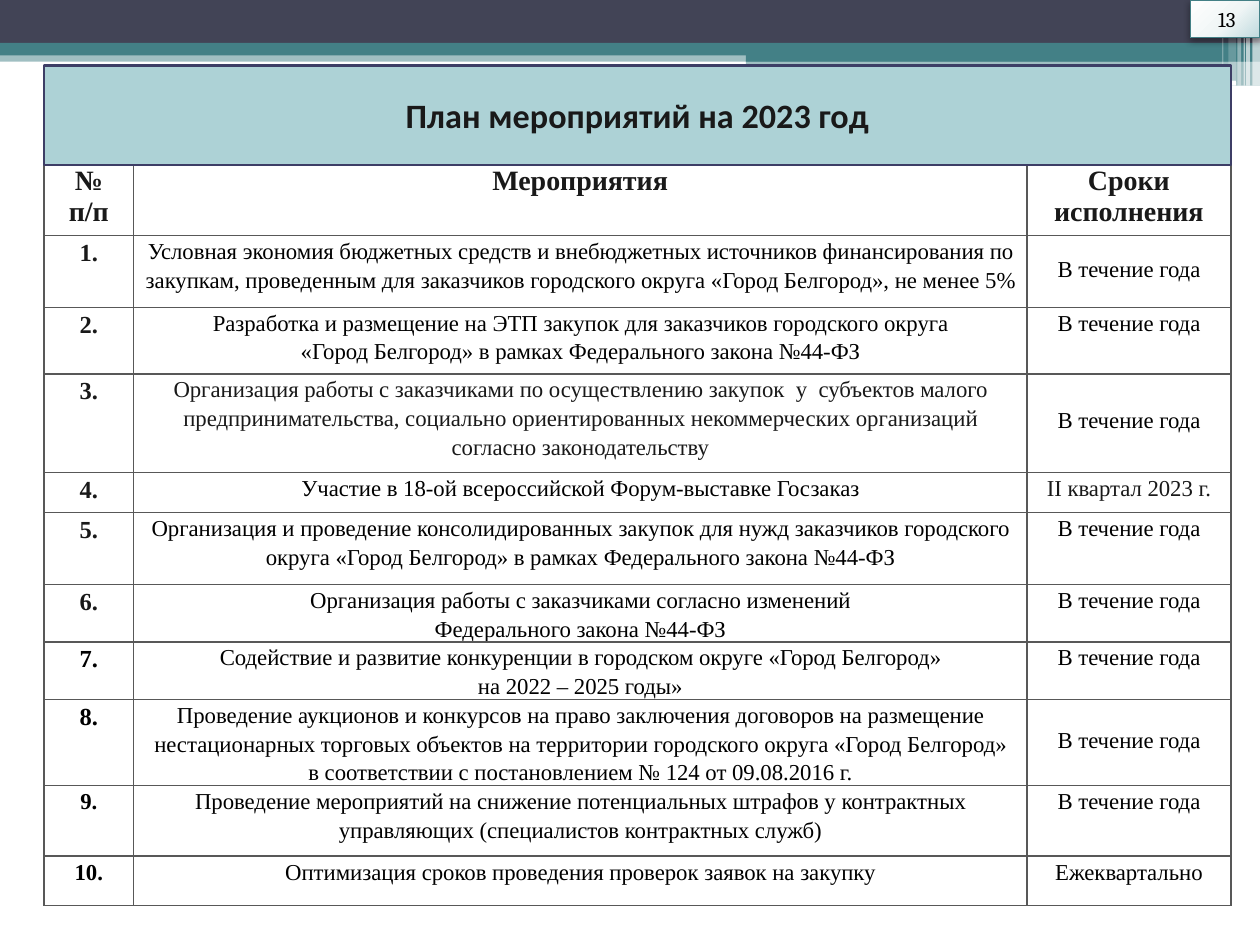
from lxml import etree
from pptx import Presentation
from pptx import oxml
from pptx.dml.color import RGBColor
from pptx.enum import shapes, text
from pptx.oxml import ns
from pptx.util import Inches, Pt

DARK = RGBColor(0x42, 0x44, 0x56)
TEAL = RGBColor(0x43, 0x80, 0x86)
PALE = RGBColor(0xAD, 0xD2, 0xD6)
NAVY = RGBColor(0x3D, 0x3E, 0x66)
GREY = RGBColor(0x58, 0x58, 0x58)
INK = RGBColor(0x19, 0x19, 0x19)
BLACK = RGBColor(0, 0, 0)
WHITE = RGBColor(0xFF, 0xFF, 0xFF)

BANDS = [
    (0, 0.4, 10, 0.09, TEAL, 50),
    (0, 0, 10, 0.34, DARK, 100),
    (0, 0.34, 10, 0.1, TEAL, 100),
    (5.92, 0.39, 4.08, 0.1, TEAL, 100),
    (5.92, 0.48, 4.08, 0.2, TEAL, 50),
]
STRIPES = [
    (9.94, 0.06, 0.68, 65),
    (9.89, 0.03, 0.68, 65),
    (9.87, 0.01, 0.68, 60),
    (9.82, 0.03, 0.68, 40),
    (9.75, 0.06, 0.64, 20),
    (9.7, 0.01, 0.64, 30),
]
COLS = [0.71, 7.09, 1.62]
ROWS = [0.56, 0.57, 0.53, 0.78, 0.32, 0.57, 0.45, 0.45, 0.67, 0.56, 0.39]
HEADS = [["№", "п/п"], ["Мероприятия"], ["Сроки исполнения"]]
YEAR = "В течение года"
PLAN = [
    (["Условная экономия бюджетных средств и внебюджетных источников финансирования по "
      "закупкам, проведенным для заказчиков городского округа «Город Белгород», не менее 5%"], YEAR),
    (["Разработка и размещение на ЭТП закупок для заказчиков городского округа",
      "«Город Белгород» в рамках Федерального закона №44-ФЗ"], YEAR),
    (["Организация работы с заказчиками по осуществлению закупок  у  субъектов малого "
      "предпринимательства, социально ориентированных некоммерческих организаций "
      "согласно законодательству"], YEAR),
    (["Участие в 18-ой всероссийской Форум-выставке Госзаказ"], "II квартал 2023 г."),
    (["Организация и проведение консолидированных закупок для нужд заказчиков городского "
      "округа «Город Белгород» в рамках Федерального закона №44-ФЗ"], YEAR),
    (["Организация работы с заказчиками согласно изменений",
      "Федерального закона №44-ФЗ"], YEAR),
    (["Содействие и развитие конкуренции в городском округе «Город Белгород»",
      "на 2022 – 2025 годы»"], YEAR),
    (["Проведение аукционов и конкурсов на право заключения договоров на размещение "
      "нестационарных торговых объектов на территории городского округа «Город Белгород»",
      "в соответствии с постановлением № 124 от 09.08.2016 г."], YEAR),
    (["Проведение мероприятий на снижение потенциальных штрафов у контрактных "
      "управляющих (специалистов контрактных служб)"], YEAR),
    (["Оптимизация сроков проведения проверок заявок на закупку"], "Ежеквартально"),
]
CENTRED = {1, 3, 8}

BADGE_FILL = f"""<a:gradFill {ns.nsdecls('a')} rotWithShape="1"><a:gsLst>
<a:gs pos="0"><a:srgbClr val="FEFEFE"/></a:gs>
<a:gs pos="55000"><a:srgbClr val="F0F6F6"/></a:gs>
<a:gs pos="100000"><a:srgbClr val="BFD9DD"/></a:gs></a:gsLst>
<a:path path="circle"><a:fillToRect l="-40000" t="-90000" r="140000" b="190000"/></a:path>
</a:gradFill>"""
BADGE_SHADE = f"""<a:effectLst {ns.nsdecls('a')}>
<a:outerShdw blurRad="52000" dist="25400" dir="5400000" rotWithShape="0">
<a:srgbClr val="000000"><a:alpha val="40000"/></a:srgbClr></a:outerShdw></a:effectLst>"""


class Deck:
    serif = "Times New Roman"

    def __init__(self):
        self.prs = Presentation()
        self.prs.slide_width, self.prs.slide_height = Inches(10), Inches(7.5)
        self.slide = self.prs.slides.add_slide(self.prs.slide_layouts[5])

    def box(self, x, y, w, h, color, alpha=100, kind=shapes.MSO_SHAPE.RECTANGLE):
        shape = self.slide.shapes.add_shape(kind, Inches(x), Inches(y), Inches(w), Inches(h))
        shape.shadow.inherit = False
        shape.fill.solid()
        shape.fill.fore_color.rgb = color
        shape.line.fill.background()
        if alpha < 100:
            tone = shape._element.spPr.find(".//" + ns.qn("a:srgbClr"))
            etree.SubElement(tone, ns.qn("a:alpha")).set("val", str(alpha * 1000))
        return shape

    def label(self, para, words, size, font, color=INK, bold=False, align=text.PP_ALIGN.CENTER):
        para.alignment = align
        run = para.add_run()
        run.text = words
        run.font.size, run.font.name, run.font.bold = Pt(size), font, bold
        run.font.color.rgb = color

    def title(self, words, x, y, w, h):
        shape = self.slide.shapes.title
        shape.left, shape.top, shape.width, shape.height = map(Inches, (x, y, w, h))
        shape._element.spPr.append(oxml.parse_xml(
            f'<a:prstGeom {ns.nsdecls("a")} prst="roundRect"><a:avLst/></a:prstGeom>'))
        shape.fill.solid()
        shape.fill.fore_color.rgb = PALE
        shape.line.color.rgb, shape.line.width = NAVY, Pt(1.5)
        frame = shape.text_frame
        frame.auto_size = text.MSO_AUTO_SIZE.NONE
        frame.vertical_anchor = text.MSO_ANCHOR.MIDDLE
        self.label(frame.paragraphs[0], words, 19.5, "Calibri", bold=True)
        self.slide.shapes._spTree.append(shape._element)

    def badge(self, words, x, y, w, h):
        shape = self.box(x, y, w, h, WHITE)
        props = shape._element.spPr
        props.replace(props.find(ns.qn("a:solidFill")), oxml.parse_xml(BADGE_FILL))
        props.replace(props.find(ns.qn("a:effectLst")), oxml.parse_xml(BADGE_SHADE))
        shape.line.color.rgb, shape.line.width = TEAL, Pt(0.75)
        para = shape.text_frame.paragraphs[0]
        para._p.get_or_add_pPr().set("marL", str(Inches(0.12)))
        self.label(para, words, 12, "Cambria", BLACK, align=text.PP_ALIGN.LEFT)

    def cell(self, cell, lines, size, color, bold, space=1.15, side=0.07):
        cell.margin_left = cell.margin_right = Inches(side)
        cell.margin_top = cell.margin_bottom = 0
        props = cell._tc.get_or_add_tcPr()
        for edge in "LRTB":
            props.append(oxml.parse_xml(
                f'<a:ln{edge} {ns.nsdecls("a")} w="12700"><a:solidFill>'
                f'<a:srgbClr val="{GREY}"/></a:solidFill></a:ln{edge}>'))
        cell.fill.background()
        frame = cell.text_frame
        for i, line in enumerate(lines):
            para = frame.add_paragraph() if i else frame.paragraphs[0]
            para.line_spacing = space
            self.label(para, line, size, self.serif, color, bold)

    def table(self, x, y):
        grid = self.slide.shapes.add_table(
            len(ROWS), len(COLS), Inches(x), Inches(y), Inches(sum(COLS)), Inches(sum(ROWS))).table
        grid.first_row = grid.horz_banding = False
        for col, width in zip(grid.columns, COLS):
            col.width = Inches(width)
        for row, height in zip(grid.rows, ROWS):
            row.height = Inches(height)
        for j, lines in enumerate(HEADS):
            self.cell(grid.cell(0, j), lines, 16, INK, True, 1.0)
        for i, (task, term) in enumerate(PLAN, 1):
            num, job, date = (grid.cell(i, j) for j in range(3))
            self.cell(num, [f"{i}."], 14 if i < 9 else 13, INK if i < 7 else BLACK, True)
            self.cell(job, task, 13, INK if i == 3 else BLACK, False, side=0.12 if i == 5 else 0.07)
            self.cell(date, [term], 13, INK if i == 4 else BLACK, False)
            if i in CENTRED:
                date.vertical_anchor = text.MSO_ANCHOR.MIDDLE
                date.margin_bottom = Inches(0.06)
        grid.cell(5, 1).text_frame.paragraphs[0].space_after = Pt(10)


def main():
    deck = Deck()
    for band in BANDS:
        deck.box(*band)
    deck.box(8.06, 0.64, 1.75, 0.04, WHITE, kind=shapes.MSO_SHAPE.ROUNDED_RECTANGLE)
    for x, w, h, alpha in STRIPES:
        deck.box(x, 0, w, h, WHITE, alpha)
    deck.table(0.35, 1.31)
    deck.title("План мероприятий на 2023 год", 0.35, 0.52, 9.42, 0.79)
    deck.badge("13", 9.45, 0, 0.55, 0.3)
    deck.prs.save("out.pptx")


if __name__ == "__main__":
    main()
